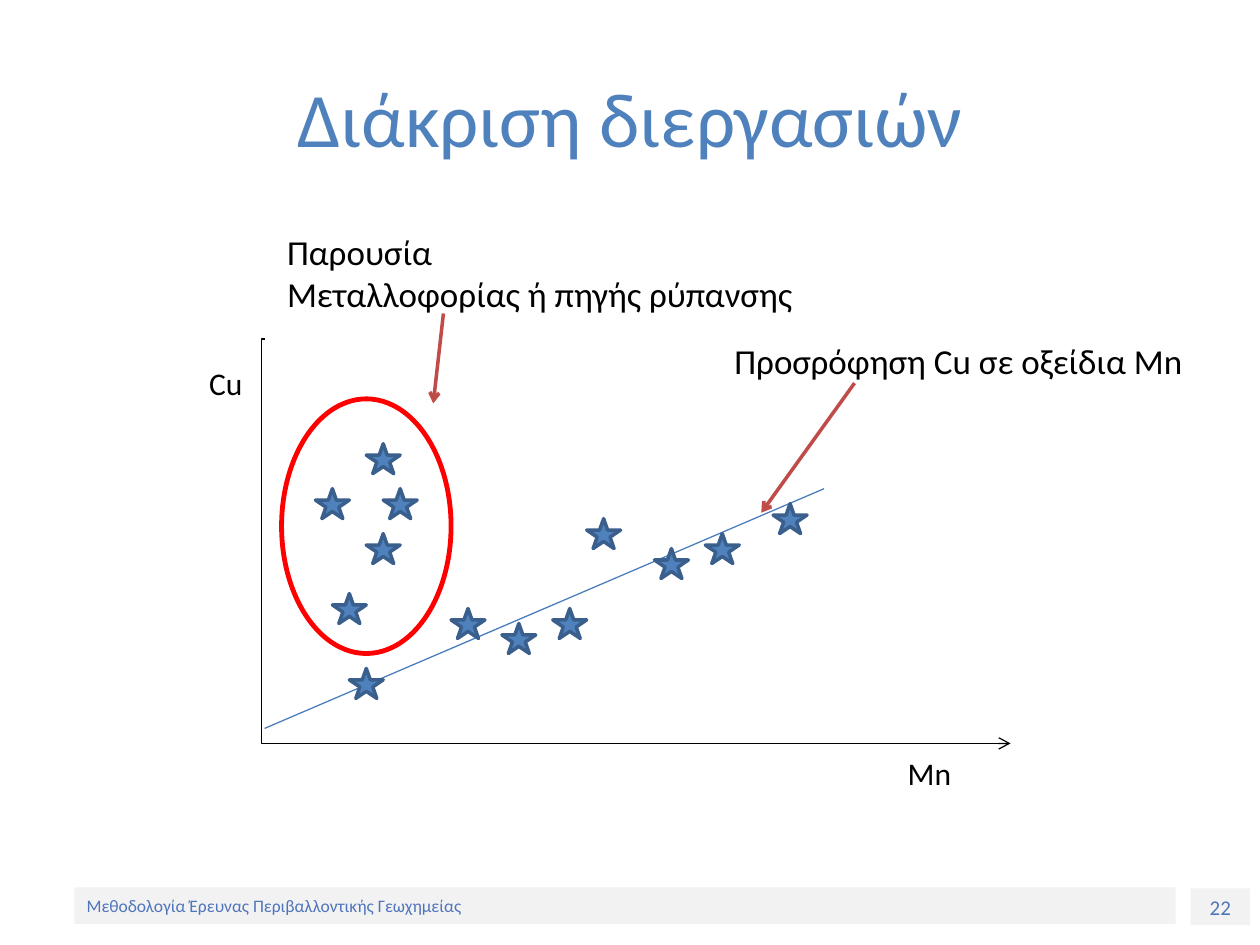
from dataclasses import dataclass

from lxml import etree
from pptx import Presentation
from pptx.dml.color import RGBColor
from pptx.enum.shapes import MSO_CONNECTOR, MSO_SHAPE
from pptx.enum.text import MSO_ANCHOR, PP_ALIGN
from pptx.oxml.ns import qn
from pptx.util import Inches, Pt

STAR, OVAL, RECT = MSO_SHAPE.STAR_5_POINT, MSO_SHAPE.OVAL, MSO_SHAPE.RECTANGLE
LINE, BENT = MSO_CONNECTOR.STRAIGHT, MSO_CONNECTOR.ELBOW
LEFT, MID = PP_ALIGN.LEFT, PP_ALIGN.CENTER
HALF = MSO_ANCHOR.MIDDLE
WIDE, HIGH = 10, 7.5


@dataclass(frozen=True)
class Theme:
    """Fonts, colours and sizes of the slide."""
    font: str = "Calibri"
    ink: str = "000000"
    blue: str = "4F81BD"
    edge: str = "3A5F8C"
    trend: str = "4B7EBC"
    ring: str = "FF0000"
    arrow: str = "BF4C48"
    band: str = "F2F2F2"
    foot: str = "5075BC"
    head: int = 44
    note: int = 20
    axis: int = 18
    page: int = 12
    small: int = 10
    thin: float = 0.75
    mid: float = 2
    thick: float = 2.75


def tint(code):
    """Turn a hex code into a colour."""
    return RGBColor.from_string(code)


class Page:
    """Draws on one slide, with plot units counted from the top of the axis."""
    left, top = 2.1, 2.69
    col, row = 4.44 / 33, 3.21 / 27

    def __init__(self, deck, theme):
        """Add a slide that has a title only."""
        self.slide = deck.slides.add_slide(deck.slide_layouts[5])
        self.shapes = self.slide.shapes
        self.theme = theme

    def spot(self, x, y):
        """Place a plot point on the slide."""
        return Inches(self.left + x * self.col), Inches(self.top + y * self.row)

    def area(self, x, y, w, h):
        """Place a box given in plot units."""
        return *self.spot(x, y), Inches(w * self.col), Inches(h * self.row)

    def share(self, x, y, w, h):
        """Place a box given as percentages of the slide."""
        wide, high = WIDE / 100, HIGH / 100
        return Inches(x * wide), Inches(y * high), Inches(w * wide), Inches(h * high)

    def words(self, frame, lines, size, color, align=LEFT):
        """Fill a text frame with styled paragraphs."""
        frame.text = "\n".join(lines)
        for para in frame.paragraphs:
            para.alignment = align
            font = para.font
            font.name, font.size = self.theme.font, Pt(size)
            font.color.rgb = tint(color)

    def title(self, text, box):
        """Move and fill the title placeholder."""
        item = self.shapes.title
        item.left, item.top, item.width, item.height = box
        item.text_frame.vertical_anchor = HALF
        self.words(item.text_frame, [text], self.theme.head, self.theme.blue, MID)

    def label(self, lines, box, size):
        """Add a plain label."""
        frame = self.shapes.add_textbox(*box).text_frame
        frame.word_wrap = False
        self.words(frame, lines, size, self.theme.ink)

    def shape(self, kind, box, fill=None, line=None, width=0):
        """Add a preset shape without shadow."""
        item = self.shapes.add_shape(kind, *box)
        item.shadow.inherit = False
        if fill:
            item.fill.solid()
            item.fill.fore_color.rgb = tint(fill)
        else:
            item.fill.background()
        if line:
            item.line.color.rgb = tint(line)
            item.line.width = Pt(width)
        else:
            item.line.fill.background()
        return item

    def band(self, text, box, size, align=LEFT):
        """Add a footer band with its text."""
        frame = self.shape(RECT, box, self.theme.band).text_frame
        frame.vertical_anchor = HALF
        self.words(frame, [text], size, self.theme.foot, align)

    def link(self, start, end, color, width, tip=True, kind=LINE, bend=None):
        """Join two plot points, with an arrowhead if asked."""
        item = self.shapes.add_connector(kind, *self.spot(*start), *self.spot(*end))
        item.line.color.rgb = tint(color)
        item.line.width = Pt(width)
        root = item._element.spPr
        if tip:
            etree.SubElement(root.find(qn("a:ln")), qn("a:tailEnd"), type="arrow")
        etree.SubElement(root, qn("a:effectLst"))
        if bend is not None:
            form = root.find(qn("a:prstGeom"))
            guides = form.find(qn("a:avLst"))
            etree.SubElement(guides, qn("a:gd"), name="adj1", fmla=f"val {bend}")


def main():
    """Build and save the slide."""
    deck = Presentation()
    deck.slide_width, deck.slide_height = Inches(WIDE), Inches(HIGH)
    look = Theme()
    page = Page(deck, look)

    page.band("22", page.share(94.5, 94, 4.7, 3.9), look.page, MID)
    page.band("Μεθοδολογία Έρευνας Περιβαλλοντικής Γεωχημείας",
              page.share(5.9, 93.9, 87.4, 3.9), look.small)
    page.title("Διάκριση διεργασιών", page.share(5, 4, 90, 16.67))
    page.label(["Παρουσία", "Μεταλλοφορίας ή πηγής ρύπανσης"],
               page.share(21.8, 23.7, 42.4, 10.3), look.note)

    page.link((0, 0), (44, 27), look.ink, look.thin, kind=BENT, bend=-400)
    page.label(["Mn"], page.area(37.2, 27.3, 4.1, 3.4), look.axis)
    page.label(["Cu"], page.area(-4, 1.25, 3.5, 3.4), look.axis)
    page.link((0, 26), (33, 10), look.trend, look.thin, tip=False)

    stars = [(30, 11), (14, 19), (23, 14), (11, 18), (5, 22), (26, 13), (17, 18),
             (19, 12), (4, 17), (6, 7), (7, 10), (3, 10), (6, 13)]
    for x, y in stars:
        page.shape(STAR, page.area(x, y, 2, 2), look.blue, look.edge, look.mid)
    page.shape(OVAL, page.area(1, 4, 10, 17), line=look.ring, width=look.thick)

    arrows = [((10.55, -1.7), (9.95, 4.3)), ((34.8, 2.95), (29.3, 11.6))]
    for start, end in arrows:
        page.link(start, end, look.arrow, look.mid)
    page.label(["Προσρόφηση Cu σε οξείδια Mn"],
               page.share(57.3, 35.3, 38.5, 5.9), look.note)
    deck.save("out.pptx")


if __name__ == "__main__":
    main()
